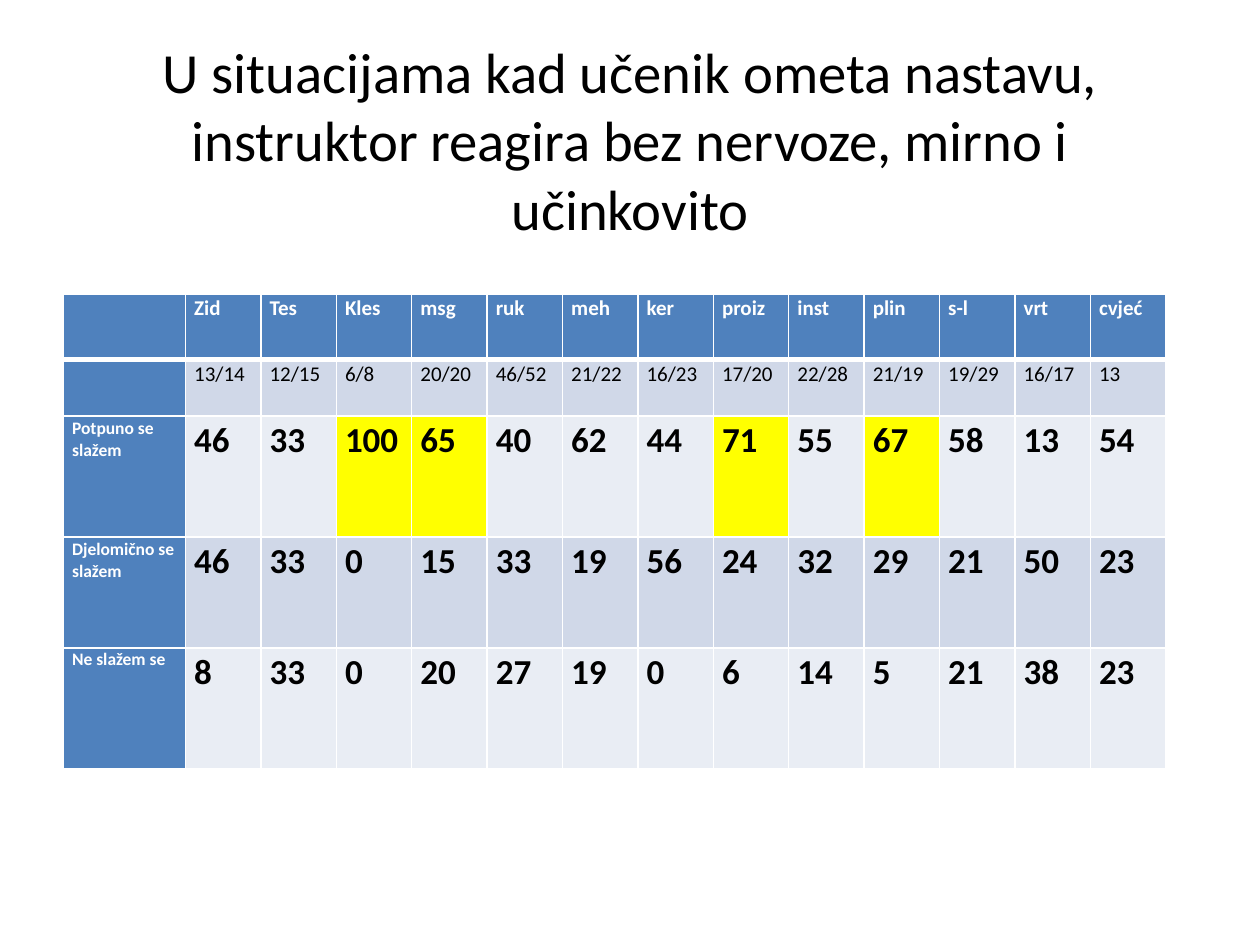
from lxml.etree import SubElement as Sub
from pptx import Presentation
from pptx.dml.color import RGBColor
from pptx.enum.text import MSO_ANCHOR as Anchor, MSO_AUTO_SIZE as Fit, PP_ALIGN as Align
from pptx.oxml.ns import qn
from pptx.util import Pt

FONT = "Calibri"
BLUE, WHITE, BLACK, GOLD = "4F81BD", "FFFFFF", "000000", "FFFF00"
DARK, LIGHT = "D0D8E8", "E9EDF4"
TITLE = ("U situacijama kad učenik ometa nastavu, instruktor reagira "
         "bez nervoze, mirno i učinkovito")
ROWS = [
    ["", "Zid", "Tes", "Kles", "msg", "ruk", "meh", "ker",
     "proiz", "inst", "plin", "s-l", "vrt", "cvjeć"],
    ["", "13/14", "12/15", "6/8", "20/20", "46/52", "21/22", "16/23",
     "17/20", "22/28", "21/19", "19/29", "16/17", "13"],
    ["Potpuno se slažem", 46, 33, 100, 65, 40, 62, 44, 71, 55, 67, 58, 13, 54],
    ["Djelomično se slažem", 46, 33, 0, 15, 33, 19, 56, 24, 32, 29, 21, 50, 23],
    ["Ne slažem se", 8, 33, 0, 20, 27, 19, 0, 6, 14, 5, 21, 38, 23],
]
HIGH = [37.4, 32.4, 69.1, 63.4, 69.1]
LABEL = 69.8
TOP = 65


def tint(code):
    return RGBColor.from_string(code)


def style(para, size, color, bold=False):
    font = para.font
    font.name, font.size, font.bold = FONT, Pt(size), bold
    font.color.rgb = tint(color)


def edge(cell, row):
    props = cell._tc.get_or_add_tcPr()
    wide = {"T": 3 if row == 1 else 1, "B": 3 if row == 0 else 1}
    for side in "LRTB":
        line = Sub(props, qn(f"a:ln{side}"), w=str(Pt(wide.get(side, 1))))
        Sub(Sub(line, qn("a:solidFill")), qn("a:srgbClr"), val=WHITE)


def look(row, col, value):
    if row == 0:
        return BLUE, 12, WHITE, True
    if col == 0:
        return BLUE, 10, WHITE, True
    band = DARK if row % 2 else LIGHT
    if row == 1:
        return band, 12, BLACK, False
    return GOLD if row == 2 and value >= TOP else band, 20, BLACK, True


def fill_cell(cell, row, col, value):
    back, size, color, bold = look(row, col, value)
    edge(cell, row)
    cell.fill.solid()
    cell.fill.fore_color.rgb = tint(back)
    cell.margin_left = cell.margin_right = Pt(5)
    cell.margin_top = cell.margin_bottom = 0
    cell.text = str(value)
    para = cell.text_frame.paragraphs[0]
    para.line_spacing = 1.07
    style(para, size, color, bold)


def add_title(slide, left, top, width, height):
    title = slide.shapes.title
    title.left, title.top = Pt(left), Pt(top)
    title.width, title.height = Pt(width), Pt(height)
    frame = title.text_frame
    frame.text = TITLE
    frame.word_wrap, frame.auto_size = True, Fit.NONE
    frame.vertical_anchor = Anchor.MIDDLE
    frame.margin_bottom = 0
    para = frame.paragraphs[0]
    para.alignment = Align.CENTER
    style(para, 32.4, BLACK)


def add_grid(slide, left, top, width, height):
    count = len(ROWS[0])
    grid = slide.shapes.add_table(len(ROWS), count, Pt(left), Pt(top),
                                  Pt(width), Pt(height)).table
    for col, part in enumerate(grid.columns):
        part.width = Pt((width - LABEL) / (count - 1) if col else LABEL)
    for row, values in enumerate(ROWS):
        grid.rows[row].height = Pt(HIGH[row])
        for col, value in enumerate(values):
            fill_cell(grid.cell(row, col), row, col, value)


def main():
    deck = Presentation()
    deck.slide_width, deck.slide_height = Pt(720), Pt(540)
    slide = deck.slides.add_slide(deck.slide_layouts[5])
    add_title(slide, 36, 21.6, 648, 112.4)
    add_grid(slide, 36.2, 168, 630, sum(HIGH))
    deck.save("out.pptx")


if __name__ == "__main__":
    main()
